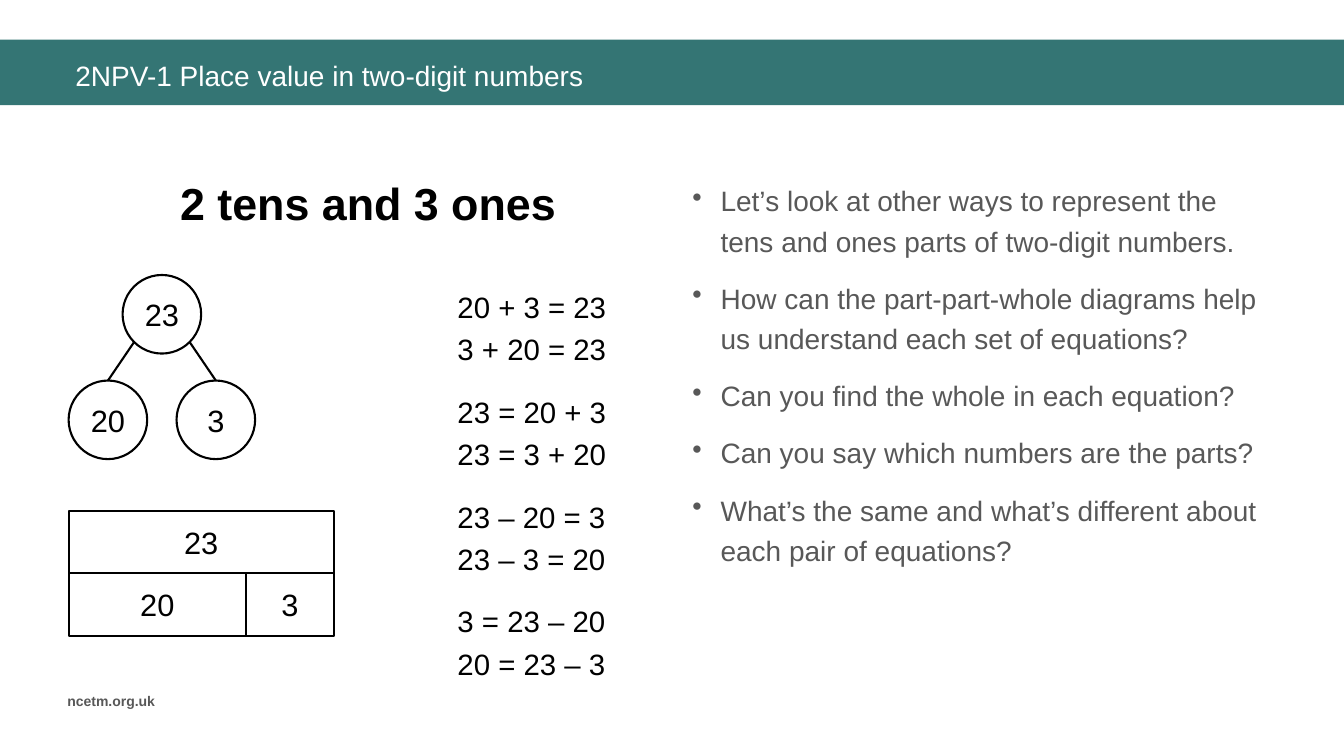
import math

import pptx
import pptx.dml.color
import pptx.enum.shapes
import pptx.enum.text
import pptx.oxml
import pptx.oxml.ns
import pptx.util

Cm, Pt = pptx.util.Cm, pptx.util.Pt
RGBColor = pptx.dml.color.RGBColor
MSO_SHAPE = pptx.enum.shapes.MSO_SHAPE
ALIGN = pptx.enum.text.PP_ALIGN
ANCHOR = pptx.enum.text.MSO_ANCHOR

TEAL = RGBColor(0x34, 0x75, 0x74)
GREY = RGBColor(0x58, 0x58, 0x58)
BLACK = RGBColor(0, 0, 0)
WHITE = RGBColor(255, 255, 255)

EQUATION_PAIRS = [
    ["20 + 3 = 23", "3 + 20 = 23"],
    ["23 = 20 + 3", "23 = 3 + 20"],
    ["23 – 20 = 3", "23 – 3 = 20"],
    ["3 = 23 – 20", "20 = 23 – 3"],
]
QUESTIONS = [
    "Let’s look at other ways to represent the tens and ones parts of two-digit numbers.",
    "How can the part-part-whole diagrams help us understand each set of equations?",
    "Can you find the whole in each equation?",
    "Can you say which numbers are the parts?",
    "What’s the same and what’s different about each pair of equations?",
]


def style_font(paragraph, size, color, bold=False):
    font = paragraph.font
    font.name, font.size, font.bold = "Arial", Pt(size), bold
    font.color.rgb = color


def add_text(slide, left, top, width, height, lines, size, color,
             bold=False, align=ALIGN.LEFT, gap=0):
    """Add a text box with one paragraph a line and return its text frame."""
    box = slide.shapes.add_textbox(Cm(left), Cm(top), Cm(width), Cm(height))
    frame = box.text_frame
    frame.word_wrap = True
    for index, line in enumerate(lines):
        paragraph = frame.paragraphs[0] if index == 0 else frame.add_paragraph()
        paragraph.text = line
        paragraph.alignment = align
        paragraph.space_before = Pt(gap if index else 0)
        style_font(paragraph, size, color, bold)
    return frame


def add_number(slide, kind, left, top, width, height, number):
    """Add an outlined shape with a number in its middle."""
    shape = slide.shapes.add_shape(kind, Cm(left), Cm(top), Cm(width), Cm(height))
    shape.shadow.inherit = False
    shape.fill.solid()
    shape.fill.fore_color.rgb = WHITE
    shape.line.color.rgb = BLACK
    shape.line.width = Pt(1.5)
    frame = shape.text_frame
    frame.margin_left = frame.margin_right = 0
    frame.vertical_anchor = ANCHOR.MIDDLE
    paragraph = frame.paragraphs[0]
    paragraph.text = number
    paragraph.alignment = ALIGN.CENTER
    style_font(paragraph, 22, BLACK)
    return shape


def add_branch(slide, x, y, part):
    """Draw a line from a point on the whole to the top of a part."""
    line = slide.shapes.add_connector(
        pptx.enum.shapes.MSO_CONNECTOR.STRAIGHT, Cm(x), Cm(y),
        part.left + part.width // 2, part.top)
    line.end_connect(part, 0)
    line.line.color.rgb = BLACK
    line.line.width = Pt(1.5)
    properties = line._element.spPr
    properties.append(pptx.oxml.parse_xml(
        "<a:effectLst %s/>" % pptx.oxml.ns.nsdecls("a")))


def add_cherry_diagram(slide):
    size, left, top, step_x, step_y = 1.98, 1.73, 6.93, 2.72, 2.66
    whole_left = left + step_x / 2
    add_number(slide, MSO_SHAPE.OVAL, whole_left, top, size, size, "23")
    center_x, center_y = whole_left + size / 2, top + size / 2
    reach = size / 2 * math.sqrt(0.5)
    for index, (number, side) in enumerate([("20", -1), ("3", 1)]):
        part = add_number(slide, MSO_SHAPE.OVAL, left + index * step_x,
                          top + step_y, size, size, number)
        add_branch(slide, center_x + side * reach, center_y + reach, part)


def add_bar_model(slide):
    left, top, height, tens, ones = 1.73, 12.88, 1.57, 4.47, 2.21
    bars = [
        (left, top, tens + ones, "23"),
        (left, top + height, tens, "20"),
        (left + tens, top + height, ones, "3"),
    ]
    for x, y, width, number in bars:
        add_number(slide, MSO_SHAPE.RECTANGLE, x, y, width, height, number)


def add_bullets(frame):
    for paragraph in frame.paragraphs:
        paragraph.line_spacing = 1.2
        paragraph.space_after = Pt(6)
        properties = paragraph._p.get_or_add_pPr()
        properties.set("marL", str(Cm(0.71)))
        properties.set("indent", str(-Cm(0.71)))
        bullet = pptx.oxml.parse_xml(
            '<a:buChar %s char="•"/>' % pptx.oxml.ns.nsdecls("a"))
        properties.insert_element_before(
            bullet, "a:tabLst", "a:defRPr", "a:extLst")


def main():
    presentation = pptx.Presentation()
    presentation.slide_width, presentation.slide_height = Cm(33.87), Cm(19.05)
    slide = presentation.slides.add_slide(presentation.slide_layouts[6])

    # Title band and footer
    band = slide.shapes.add_shape(
        MSO_SHAPE.RECTANGLE, 0, Cm(1), presentation.slide_width, Cm(1.65))
    band.shadow.inherit = False
    band.fill.solid()
    band.fill.fore_color.rgb = TEAL
    band.line.fill.background()
    title = add_text(slide, 1.65, 1.3, 31.3, 1.19,
                     ["2NPV-1 Place value in two-digit numbers"], 20, WHITE)
    title.vertical_anchor = ANCHOR.MIDDLE
    add_text(slide, 1.45, 17.32, 3.07, 0.69, ["ncetm.org.uk"], 10, GREY, bold=True)

    # Heading and part-part-whole diagrams
    add_text(slide, 3.07, 4.3, 12.42, 1.63, ["2 tens and 3 ones"], 32, BLACK,
             bold=True, align=ALIGN.CENTER)
    add_cherry_diagram(slide)
    add_bar_model(slide)

    # Equation pairs
    for index, pair in enumerate(EQUATION_PAIRS):
        add_text(slide, 11.28, 7.16 + index * 2.64, 4.4, 2.24, pair, 21, BLACK, gap=5)

    # Questions
    add_bullets(add_text(slide, 17.2, 4.34, 14.99, 11.4, QUESTIONS, 20, GREY, gap=6))

    presentation.save("out.pptx")


if __name__ == "__main__":
    main()
